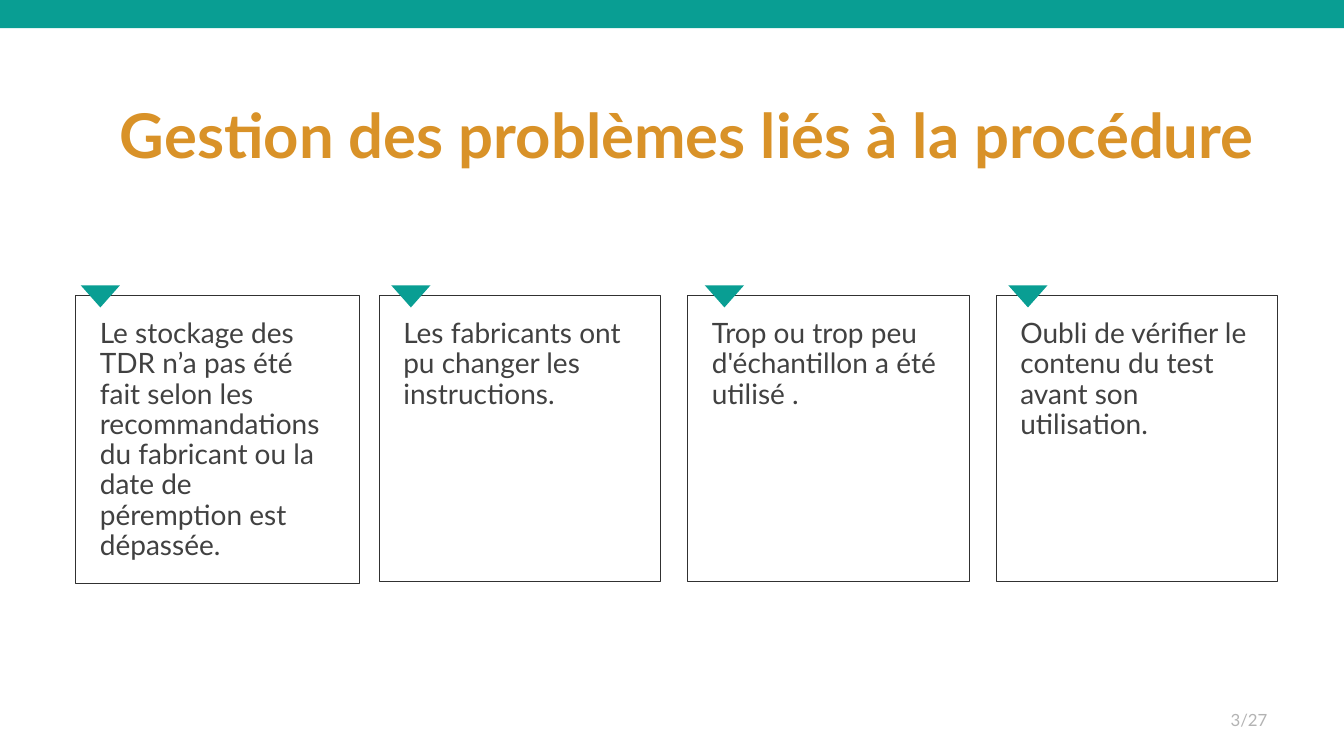
from dataclasses import dataclass

from lxml.etree import SubElement
from pptx import Presentation
from pptx.dml.color import RGBColor
from pptx.enum.shapes import MSO_SHAPE
from pptx.enum.text import MSO_ANCHOR, MSO_AUTO_SIZE, PP_ALIGN
from pptx.oxml.ns import qn
from pptx.util import Inches, Pt


@dataclass(frozen=True)
class Theme:
    font: str = "Lato"
    teal: RGBColor = RGBColor(0x09, 0x9E, 0x93)
    orange: RGBColor = RGBColor(0xD9, 0x92, 0x28)
    text: RGBColor = RGBColor(0x41, 0x41, 0x41)
    border: RGBColor = RGBColor(0x31, 0x31, 0x31)
    muted: RGBColor = RGBColor(0xB3, 0xB3, 0xB3)
    title_size: int = 44
    body_size: int = 20
    number_size: int = 12
    line_spacing: float = 0.9


THEME = Theme()
CARD_TOP = 2.93
CARD_INSET = 0.24

# Card left, width, height, marker offset, text
CARDS = [
    (0.75, 2.81, 2.86, 0.05,
     "Le stockage des TDR n’a pas été fait selon les recommandations "
     "du fabricant ou la date de péremption est dépassée."),
    (3.76, 2.79, 2.84, 0.12, "Les fabricants ont pu changer les instructions."),
    (6.82, 2.79, 2.84, 0.17, "Trop ou trop peu d'échantillon a été utilisé ."),
    (9.88, 2.79, 2.84, 0.12,
     "Oubli de vérifier le contenu du test avant son utilisation."),
]


def place(shape, left, top, width, height):
    shape.left, shape.top = Inches(left), Inches(top)
    shape.width, shape.height = Inches(width), Inches(height)


def write(shape, text, size, color, alignment, anchor, bold=False):
    frame = shape.text_frame
    frame.word_wrap = True
    frame.auto_size = MSO_AUTO_SIZE.NONE
    frame.vertical_anchor = anchor
    paragraph = frame.paragraphs[0]
    paragraph.alignment = alignment
    paragraph.line_spacing = THEME.line_spacing
    paragraph.space_before = Pt(0)
    run = paragraph.add_run()
    run.text = text
    run.font.name = THEME.font
    run.font.size = Pt(size)
    run.font.bold = bold
    run.font.color.rgb = color


def add_solid(slide, preset, left, top, width, height):
    shape = slide.shapes.add_shape(
        preset, Inches(left), Inches(top), Inches(width), Inches(height))
    shape.shadow.inherit = False
    shape.fill.solid()
    shape.fill.fore_color.rgb = THEME.teal
    shape.line.fill.background()
    return shape


def fill_title(title, left, top, width, height):
    place(title, left, top, width, height)
    write(title, "Gestion des problèmes liés à la procédure", THEME.title_size,
          THEME.orange, PP_ALIGN.CENTER, MSO_ANCHOR.MIDDLE, bold=True)


def fill_card(slide, body, left, top, width, height, marker_offset, text):
    # Bordered text
    place(body, left, top, width, height)
    body.line.color.rgb = THEME.border
    body.line.width = Pt(0.5)
    frame = body.text_frame
    frame.margin_left = frame.margin_right = Inches(CARD_INSET)
    frame.margin_top = frame.margin_bottom = Inches(CARD_INSET)
    properties = frame.paragraphs[0]._p.get_or_add_pPr()
    properties.set("marL", "0")
    properties.set("indent", "0")
    SubElement(properties, qn("a:buNone"))
    write(body, text, THEME.body_size, THEME.text, PP_ALIGN.LEFT, MSO_ANCHOR.TOP)

    # Marker pointing into the card
    marker = add_solid(slide, MSO_SHAPE.ISOSCELES_TRIANGLE,
                       left + marker_offset, top - 0.1, 0.39, 0.22)
    marker.rotation = 180


def add_page_number(slide, left, top, width, height):
    box = slide.shapes.add_textbox(
        Inches(left), Inches(top), Inches(width), Inches(height))
    write(box, "3/27", THEME.number_size, THEME.muted,
          PP_ALIGN.RIGHT, MSO_ANCHOR.MIDDLE)


def main():
    presentation = Presentation()
    presentation.slide_width = Inches(13.33)
    presentation.slide_height = Inches(7.5)

    # The comparison layout offers a title and four bodies
    slide = presentation.slides.add_slide(presentation.slide_layouts[4])
    title, *bodies = slide.placeholders

    add_solid(slide, MSO_SHAPE.RECTANGLE, 0, 0, 13.33, 0.28)
    fill_title(title, 0.71, 0.65, 12.22, 1.45)
    for body, (left, width, height, marker_offset, text) in zip(bodies, CARDS):
        fill_card(slide, body, left, CARD_TOP, width, height, marker_offset, text)
    add_page_number(slide, 9.67, 6.95, 3, 0.4)

    presentation.save("out.pptx")


if __name__ == "__main__":
    main()
